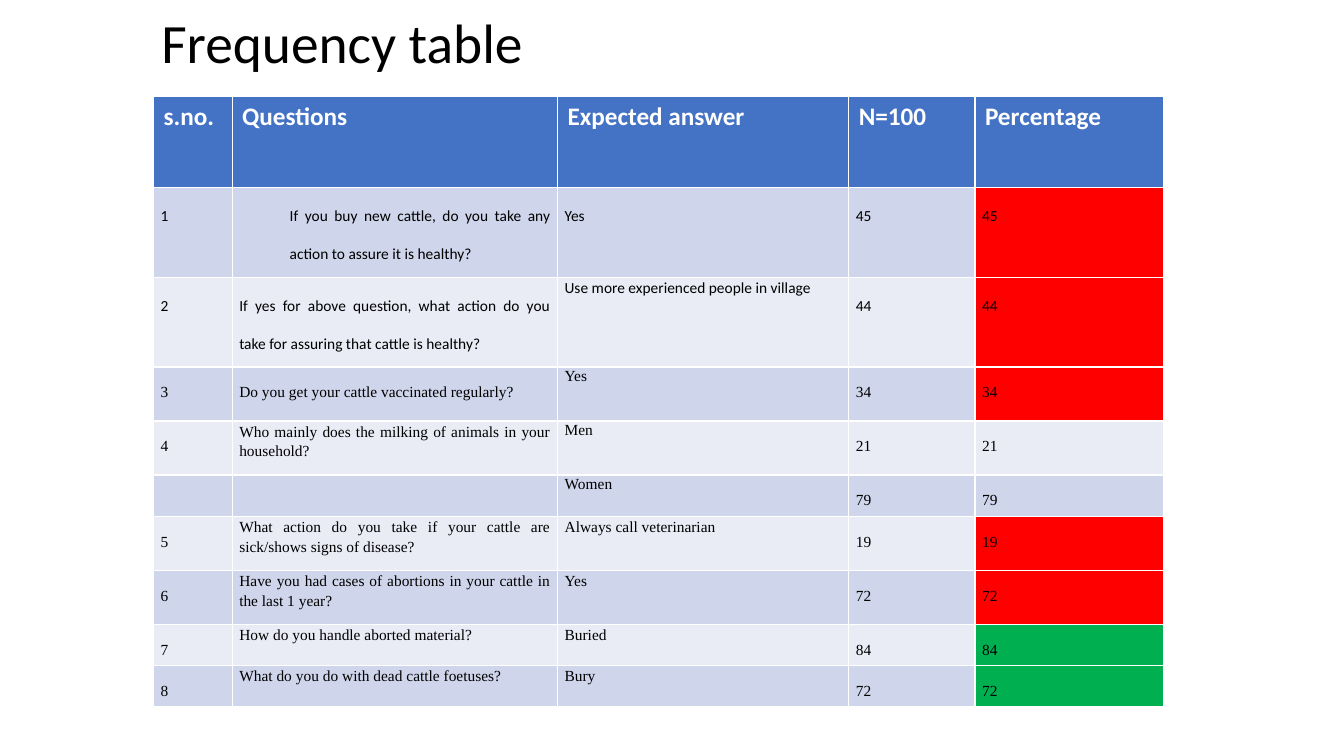
from pptx import Presentation
from pptx.dml.color import RGBColor
from pptx.enum.text import MSO_ANCHOR, MSO_AUTO_SIZE, PP_ALIGN
from pptx.util import Cm, Pt

LEFT, JUSTIFY = PP_ALIGN.LEFT, PP_ALIGN.JUSTIFY
MIDDLE = MSO_ANCHOR.MIDDLE
NO_AUTOFIT = MSO_AUTO_SIZE.NONE
SANS, SERIF = "Calibri", "Times New Roman"
BLUE, RED, GREEN = "4472C4", "FF0000", "00B050"
BANDS = "CFD5EA", "E9EBF5"
DOUBLE, TIGHT, LOOSE = (2, 0), (1.07, 0), (1.15, 10)

HEADERS = ["s.no.", "Questions", "Expected answer", "N=100", "Percentage"]
COL_WIDTHS = [1.98, 8.2, 7.34, 3.18, 4.75]
HEADER_HEIGHT = 2.31
ROWS = [
    (2.26, SANS, RED, "1", "If you buy new cattle, do you take any action to assure it is healthy?",
     DOUBLE, "Yes", DOUBLE, "45"),
    (2.26, SANS, RED, "2", "If yes for above question, what action do you take for assuring "
     "that cattle is healthy?", DOUBLE, "Use more experienced people in village", TIGHT, "44"),
    (1.36, SERIF, RED, "3", "Do you get your cattle vaccinated regularly?", DOUBLE, "Yes", TIGHT, "34"),
    (1.36, SERIF, None, "4", "Who mainly does the milking of animals in your household?",
     LOOSE, "Men", TIGHT, "21"),
    (1.04, SERIF, None, "", "", LOOSE, "Women", TIGHT, "79"),
    (1.36, SERIF, RED, "5", "What action do you take if your cattle are sick/shows signs of disease?",
     LOOSE, "Always call veterinarian", LOOSE, "19"),
    (1.36, SERIF, RED, "6", "Have you had cases of abortions in your cattle in the last 1 year?",
     LOOSE, "Yes", LOOSE, "72"),
    (1.04, SERIF, GREEN, "7", "How do you handle aborted material?", LOOSE, "Buried", LOOSE, "84"),
    (1.04, SERIF, GREEN, "8", "What do you do with dead cattle foetuses?", LOOSE, "Bury", LOOSE, "72"),
]


def rgb(value):
    return RGBColor.from_string(value)


def set_font(p, name, size, color, bold=False):
    p.font.name = name
    p.font.size = Pt(size)
    p.font.color.rgb = rgb(color)
    p.font.bold = bold


def fill_cell(cell, text, color):
    cell.fill.solid()
    cell.fill.fore_color.rgb = rgb(color)
    p = cell.text_frame.paragraphs[0]
    p.text = text
    return p


def add_body_cell(cell, text, color, font, spacing):
    p = fill_cell(cell, text, color)
    set_font(p, font, 11, "000000")
    p.alignment = JUSTIFY
    p.line_spacing = spacing[0]
    p.space_after = Pt(spacing[1])
    cell.margin_left = cell.margin_right = Cm(0.18)
    cell.margin_top = cell.margin_bottom = 0
    return p


def add_title(s, left, top, width, height):
    sp = s.shapes.title
    sp.left, sp.top, sp.width, sp.height = Cm(left), Cm(top), Cm(width), Cm(height)
    tf = sp.text_frame
    tf.auto_size = NO_AUTOFIT
    tf.vertical_anchor = MIDDLE
    p = tf.paragraphs[0]
    p.text = "Frequency table"
    p.alignment = LEFT
    p.line_spacing = 0.9
    set_font(p, SANS, 39.6, "000000")


def add_frequency_table(s, left, top):
    heights = [HEADER_HEIGHT] + [row[0] for row in ROWS]
    table = s.shapes.add_table(len(heights), len(HEADERS), Cm(left), Cm(top),
                               Cm(sum(COL_WIDTHS)), Cm(sum(heights))).table
    for column, width in zip(table.columns, COL_WIDTHS):
        column.width = Cm(width)
    for row, height in zip(table.rows, heights):
        row.height = Cm(height)
    for c, header in enumerate(HEADERS):
        set_font(fill_cell(table.cell(0, c), header, BLUE), SANS, 18, "FFFFFF", True)
    for r, (_, font, mark, number, question, q_spacing, answer, a_spacing, count) in enumerate(ROWS, 1):
        band = BANDS[(r - 1) % 2]
        texts = [number, question, answer, count, count]
        spacings = [DOUBLE, q_spacing, a_spacing, DOUBLE, DOUBLE]
        fills = [band] * 4 + [mark or band]
        for c, (text, color, spacing) in enumerate(zip(texts, fills, spacings)):
            add_body_cell(table.cell(r, c), text, color, font, spacing)
    first_question = table.cell(1, 1).text_frame.paragraphs[0]
    first_question._p.get_or_add_pPr().set("marL", str(Cm(1.27)))


def main():
    prs = Presentation()
    prs.slide_width, prs.slide_height = Cm(33.87), Cm(19.05)
    s = prs.slides.add_slide(prs.slide_layouts[5])
    add_title(s, 3.81, 0.43, 26.67, 1.42)
    add_frequency_table(s, 3.87, 2.42)
    prs.save("out.pptx")


if __name__ == "__main__":
    main()
